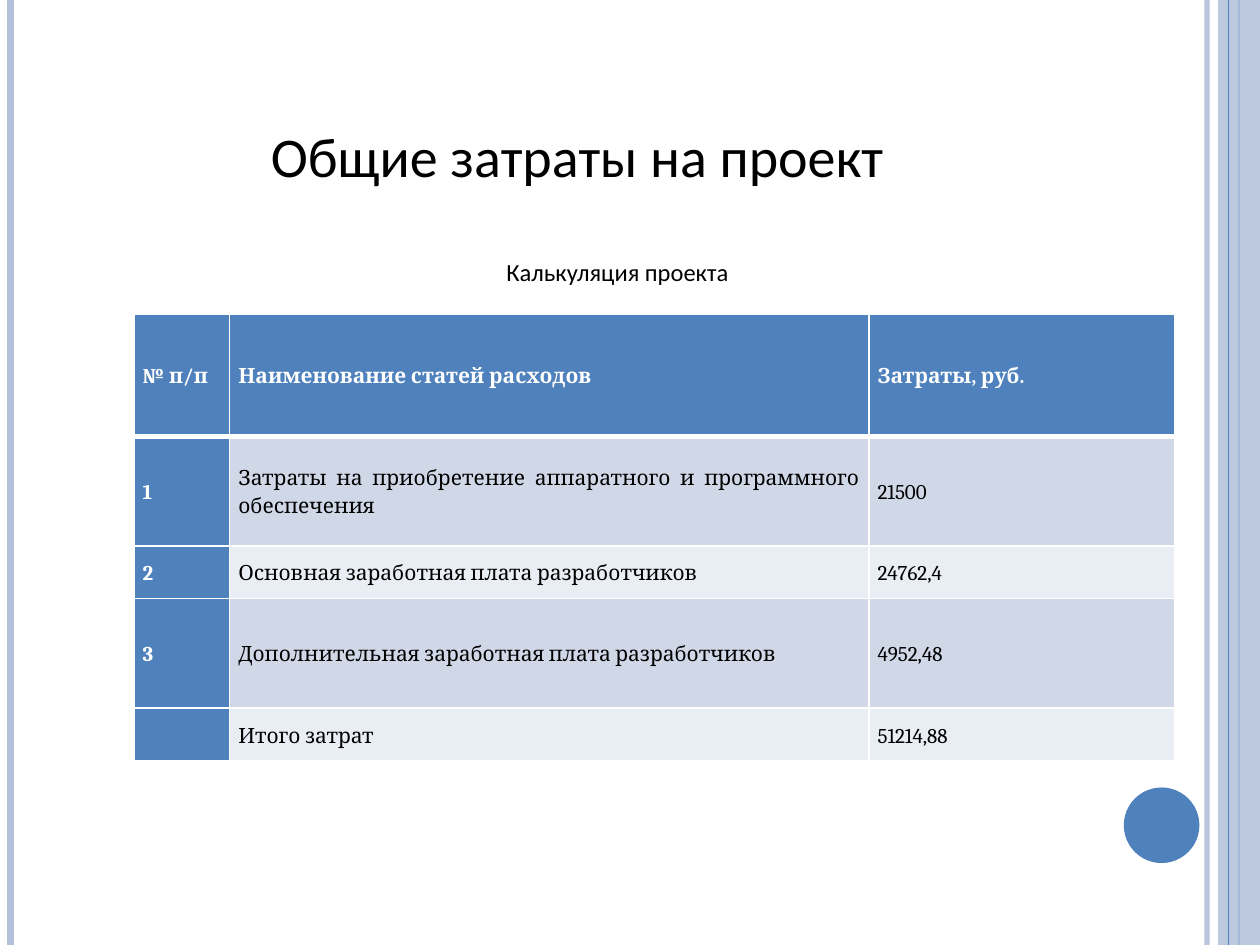
from pptx import Presentation
from pptx.dml.color import RGBColor
from pptx.enum.shapes import MSO_CONNECTOR, MSO_SHAPE
from pptx.enum.text import MSO_ANCHOR as Anchor, PP_ALIGN as Align
from pptx.oxml.ns import qn
from pptx.util import Pt
from lxml.etree import SubElement, Element

BLUE, PALE_BLUE = "4F81BD", "B3C1DB"
BLACK, WHITE = "000000", "FFFFFF"
BAND_COLORS = ["D0D8E8", "E9EDF4"]
SLIDE_WIDTH, SLIDE_HEIGHT = 720, 540

COLUMN_WIDTHS = [54.7, 365.3, 175]
ROW_HEIGHTS = [69.8, 62.6, 30.2, 62.6, 30.2]
EXPENSES = [
    ["№ п/п", "Наименование статей расходов", "Затраты, руб."],
    ["1", "Затраты на приобретение аппаратного и программного обеспечения", "21500"],
    ["2", "Основная заработная плата разработчиков", "24762,4"],
    ["3", "Дополнительная заработная плата разработчиков", "4952,48"],
    ["", "Итого затрат", "51214,88"],
]


def paint(color_format, color):
    color_format.rgb = RGBColor.from_string(color)


def fill_solid(fill, color):
    fill.solid()
    paint(fill.fore_color, color)


def set_opacity(properties, percent):
    color = properties.find(".//" + qn("a:srgbClr"))
    SubElement(color, qn("a:alpha"), val=str(percent * 1000))


def write(text_frame, text, size, font_name, color, align, bold=False):
    text_frame.text = text
    paragraph = text_frame.paragraphs[0]
    paragraph.alignment = align
    font = paragraph.font
    font.size, font.name, font.bold = Pt(size), font_name, bold
    paint(font.color, color)
    return paragraph


def add_vertical_line(slide, x, width, color, opacity=100):
    line = slide.shapes.add_connector(
        MSO_CONNECTOR.STRAIGHT, Pt(x), 0, Pt(x), Pt(SLIDE_HEIGHT))
    line.line.width = Pt(width)
    paint(line.line.color, color)
    properties = line._element.spPr
    if opacity < 100:
        set_opacity(properties, opacity)
    SubElement(properties, qn("a:effectLst"))


def add_plain_shape(slide, kind, left, top, width, height, color):
    shape = slide.shapes.add_shape(kind, Pt(left), Pt(top), Pt(width), Pt(height))
    shape.shadow.inherit = False
    fill_solid(shape.fill, color)
    shape.line.fill.background()
    return shape


def add_side_decoration(slide):
    add_vertical_line(slide, 689.8, 3, PALE_BLUE, opacity=93)
    add_vertical_line(slide, 6, 4.5, PALE_BLUE)
    add_vertical_line(slide, 708, 1.5, BLUE)
    band = add_plain_shape(slide, MSO_SHAPE.RECTANGLE, 696, 0, 24, SLIDE_HEIGHT, PALE_BLUE)
    set_opacity(band._element.spPr, 87)
    add_vertical_line(slide, 702, 0.75, BLUE)
    add_plain_shape(slide, MSO_SHAPE.OVAL, 642.2, 450, 43.2, 43.2, BLUE)


def add_title(slide, text):
    title = slide.shapes.title
    title.left, title.top, title.width, title.height = Pt(36), Pt(21.6), Pt(588), Pt(90)
    title.text_frame.vertical_anchor = Anchor.BOTTOM
    write(title.text_frame, text, 32, "Calibri", BLACK, Align.CENTER)


def add_caption(slide, text):
    box = slide.shapes.add_textbox(Pt(218.2), Pt(143.3), Pt(234), Pt(24.5))
    box.text_frame.word_wrap = True
    box.text_frame.vertical_anchor = Anchor.MIDDLE
    paragraph = write(box.text_frame, text, 14, "Calibri", BLACK, Align.CENTER)
    paragraph._p.get_or_add_pPr().set("indent", str(Pt(35.3)))


def set_borders(cell, bottom_width):
    """Draw white borders; their elements must precede the cell's fill."""
    sides = [("L", 1), ("R", 1), ("T", 1), ("B", bottom_width)]
    for position, (side, width) in enumerate(sides):
        border = Element(qn("a:ln" + side), w=str(Pt(width)))
        solid = SubElement(border, qn("a:solidFill"))
        SubElement(solid, qn("a:srgbClr"), val=WHITE)
        cell._tc.get_or_add_tcPr().insert(position, border)


def format_cell(cell, text, row, column):
    is_heading = row == 0 or column == 0
    cell.margin_left = cell.margin_right = Pt(5)
    cell.margin_top = cell.margin_bottom = 0
    cell.vertical_anchor = Anchor.MIDDLE
    fill_solid(cell.fill, BLUE if is_heading else BAND_COLORS[(row - 1) % 2])
    set_borders(cell, 3 if row == 0 else 1)
    paragraph = write(cell.text_frame, text, 12, "Cambria",
                      WHITE if is_heading else BLACK, Align.JUSTIFY, is_heading)
    paragraph.line_spacing = 1.15


def add_expense_table(slide):
    frame = slide.shapes.add_table(
        len(ROW_HEIGHTS), len(COLUMN_WIDTHS), Pt(76.5), Pt(179.5),
        Pt(sum(COLUMN_WIDTHS)), Pt(sum(ROW_HEIGHTS)))
    table = frame.table
    table.first_col = True
    for column, width in zip(table.columns, COLUMN_WIDTHS):
        column.width = Pt(width)
    for row, height in zip(table.rows, ROW_HEIGHTS):
        row.height = Pt(height)
    for row, texts in enumerate(EXPENSES):
        for column, text in enumerate(texts):
            format_cell(table.cell(row, column), text, row, column)


def main():
    presentation = Presentation()
    presentation.slide_width, presentation.slide_height = Pt(SLIDE_WIDTH), Pt(SLIDE_HEIGHT)
    slide = presentation.slides.add_slide(presentation.slide_layouts[5])
    add_side_decoration(slide)
    add_title(slide, "Общие затраты на проект")
    add_expense_table(slide)
    add_caption(slide, "Калькуляция проекта")
    presentation.save("out.pptx")


if __name__ == "__main__":
    main()
